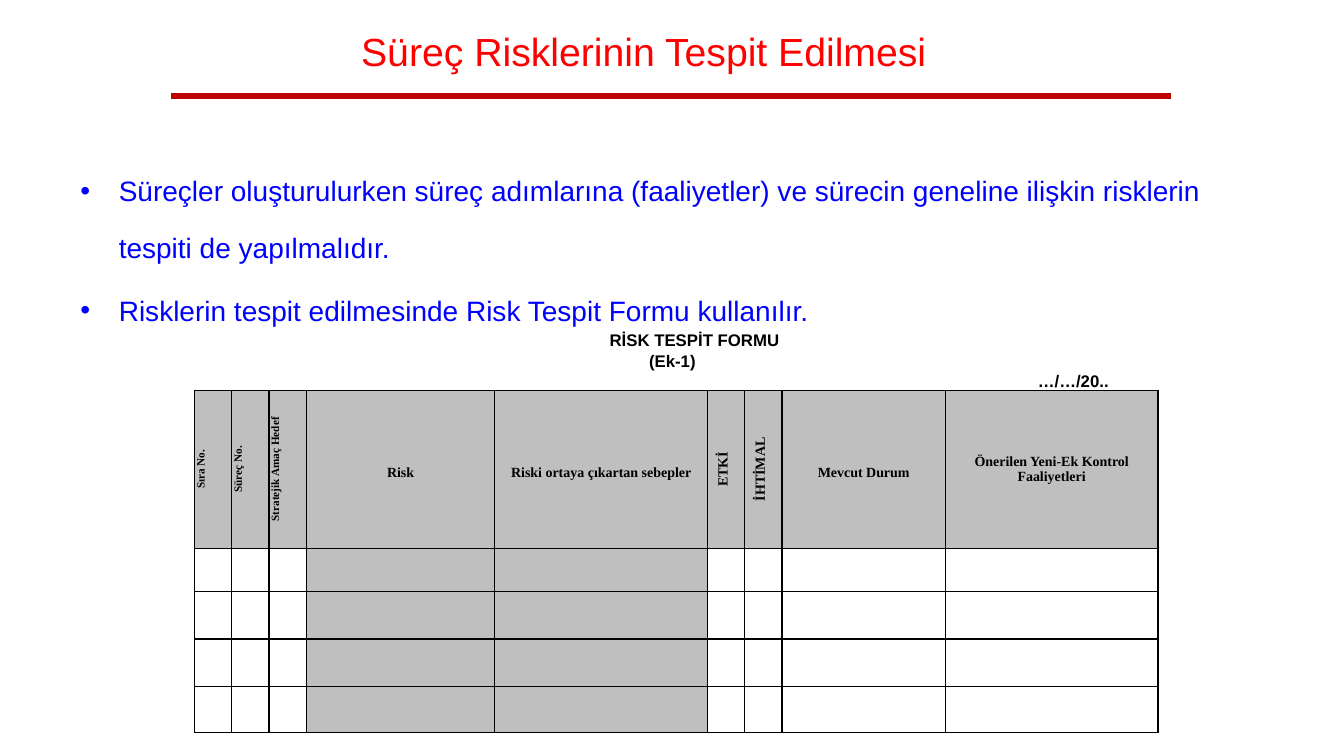
from lxml.etree import SubElement as Sub
from pptx import Presentation
from pptx.dml.color import RGBColor as RGB
from pptx.enum.shapes import MSO_CONNECTOR as Link
from pptx.enum.text import MSO_ANCHOR as Anchor, PP_ALIGN as Align
from pptx.oxml import parse_xml as to_xml
from pptx.oxml.ns import nsdecls, qn
from pptx.util import Inches, Pt

RED = RGB(0xFF, 0, 0)
DARK = RGB(0xC0, 0, 0)
BLUE = RGB(0, 0, 0xFF)
BLACK = RGB(0, 0, 0)
GRAY = RGB(0xBF, 0xBF, 0xBF)

HEAD = dict(name="Arial", size=Pt(28))
BODY = dict(name="Arial", size=Pt(20))
FORM = dict(name="Arial", size=Pt(12), bold=True)
SMALL = dict(name="Times New Roman", size=Pt(8), bold=True)
LABEL = SMALL | dict(size=Pt(10))
MID = dict(alignment=Align.CENTER)
WIDE = MID | dict(line_spacing=1.5)
LIST = dict(alignment=Align.LEFT, line_spacing=1.7)


class Deck:
    """Draws on one slide, on a grid of ten columns and rows to the inch."""

    def __init__(self, cols, rows):
        self.file = Presentation()
        self.file.slide_width = self.unit(cols)
        self.file.slide_height = self.unit(rows)
        self.page = self.file.slides.add_slide(self.file.slide_layouts[6])

    def unit(self, count):
        return Inches(count / 10)

    def put(self, item, looks):
        for key, value in looks.items():
            setattr(item, key, value)

    def fill(self, para, words, font, color, looks):
        self.put(para, looks)
        run = para.add_run()
        run.text = words
        self.put(run.font, font)
        run.font.color.rgb = color

    def indent(self, para, left, first, mark=None):
        props = para._p.get_or_add_pPr()
        props.set("marL", str(self.unit(left)))
        props.set("indent", str(self.unit(first)))
        if mark:
            Sub(props, qn("a:buFont"), typeface="Arial")
            Sub(props, qn("a:buChar"), char=mark)

    def rule(self, left, right, row, width, color):
        ends = [self.unit(n) for n in (left, row, right, row)]
        line = self.page.shapes.add_connector(Link.STRAIGHT, *ends)
        line.line.width = Pt(width)
        line.line.color.rgb = color
        Sub(line._element.spPr, qn("a:effectLst"))

    def text(self, area, lines, font, color, anchor, pads=(1, 1), mark=None):
        box = self.page.shapes.add_textbox(*map(self.unit, area))
        frame = box.text_frame
        left, right = map(self.unit, pads)
        self.put(frame, dict(word_wrap=True, vertical_anchor=anchor,
                             margin_left=left, margin_right=right))
        for n, (words, looks, inset) in enumerate(lines):
            para = frame.add_paragraph() if n else frame.paragraphs[0]
            if mark:
                self.indent(para, inset, -inset, mark)
            elif inset:
                self.indent(para, 0, inset)
            self.fill(para, words, font, color, looks)

    def edge(self, cell):
        props = cell._tc.get_or_add_tcPr()
        for n, side in enumerate("LRTB"):
            props.insert(n, to_xml(
                f'<a:ln{side} {nsdecls("a")} w="12700"><a:solidFill>'
                f'<a:srgbClr val="{BLACK}"/></a:solidFill></a:ln{side}>'))

    def table(self, left, top, cols, rows, heads, shaded):
        area = map(self.unit, (left, top, sum(cols), sum(rows)))
        grid = self.page.shapes.add_table(len(rows), len(cols), *area).table
        self.put(grid, dict(first_row=False, horz_banding=False))
        for col, size in zip(grid.columns, cols):
            col.width = self.unit(size)
        for row, size in zip(grid.rows, rows):
            row.height = self.unit(size)
        pad = self.unit(0.7)
        for n, cell in enumerate(grid.iter_cells()):
            self.put(cell, dict(margin_left=pad, margin_right=pad,
                                margin_top=0, margin_bottom=0))
            if n < len(cols) or n % len(cols) in shaded:
                cell.fill.solid()
                cell.fill.fore_color.rgb = GRAY
            else:
                cell.fill.background()
            self.edge(cell)
        for n, (words, font, looks, turn, anchor) in enumerate(heads):
            cell = grid.cell(0, n)
            cell.vertical_anchor = anchor
            if turn:
                cell._tc.get_or_add_tcPr().set("vert", "vert270")
            para = cell.text_frame.paragraphs[0]
            self.fill(para, words, font, BLACK, looks)


def main():
    deck = Deck(133.33, 75)
    deck.rule(17, 116.2, 9.5, 4.5, DARK)
    deck.text((29.2, 1.5, 69.3, 7.1),
              [("Süreç Risklerinin Tespit Edilmesi", MID, 0)],
              HEAD, RED, Anchor.MIDDLE)
    deck.text((7, 14.4, 120.5, 59.1), [
        ("Süreçler oluşturulurken süreç adımlarına (faaliyetler) ve sürecin "
         "geneline ilişkin risklerin tespiti de yapılmalıdır.", LIST, 3.8),
        ("Risklerin tespit edilmesinde Risk Tespit Formu kullanılır.",
         LIST | dict(space_before=Pt(4)), 3.8),
    ], BODY, BLUE, Anchor.TOP, mark="•")

    slim = 3.7
    deck.table(
        19.3, 38.7,
        [slim] * 3 + [18.7, 21.1] + [slim] * 2 + [16.2, 21.1],
        [15.7, 4.3, 4.7, 4.7, 4.6],
        [
            ("Sıra No.", SMALL, MID, True, Anchor.TOP),
            ("Süreç No.", SMALL, MID, True, Anchor.TOP),
            ("Stratejik Amaç Hedef", SMALL, MID, True, Anchor.TOP),
            ("Risk", LABEL, WIDE, False, Anchor.MIDDLE),
            ("Riski ortaya çıkartan sebepler", LABEL, WIDE, False,
             Anchor.MIDDLE),
            ("ETKİ", LABEL, WIDE, True, Anchor.MIDDLE),
            ("İHTİMAL", LABEL, WIDE, True, Anchor.TOP),
            ("Mevcut Durum", LABEL, WIDE, False, Anchor.MIDDLE),
            ("Önerilen Yeni-Ek Kontrol Faaliyetleri", LABEL, MID, False,
             Anchor.MIDDLE),
        ], (3, 4))

    deck.text((19.3, 32.2, 94.5, 7.1), [
        ("RİSK TESPİT FORMU", MID, 4.4),
        ("(Ek-1)", MID, 0),
        ("…/…/20..", dict(alignment=Align.RIGHT), 0),
    ], FORM, BLACK, Anchor.MIDDLE, pads=(4.1, 3.8))
    deck.file.save("out.pptx")


if __name__ == "__main__":
    main()
